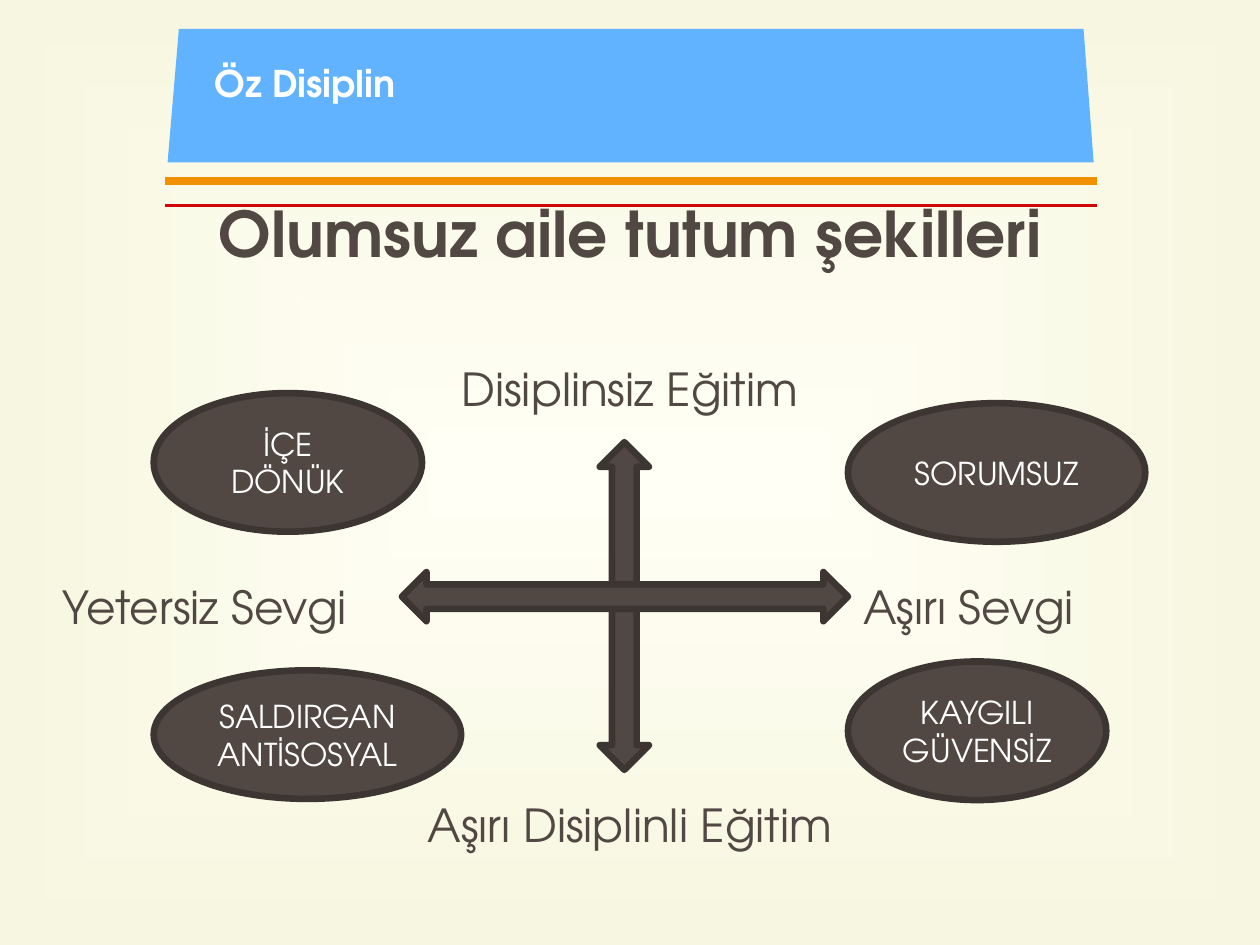
from dataclasses import dataclass

import pptx
import pptx.dml.color
import pptx.enum.shapes
import pptx.enum.text
import pptx.oxml
import pptx.oxml.ns
import pptx.util
from pptx.util import Inches

ALIGN = pptx.enum.text.PP_ALIGN
ANCHOR = pptx.enum.text.MSO_ANCHOR
SHAPE = pptx.enum.shapes.MSO_SHAPE


@dataclass(frozen=True)
class Theme:
    font: str = "TeX Gyre Adventor"
    center: str = "FFFFF5"
    edge: str = "F7F6E0"
    header: str = "61B3FF"
    orange: str = "F29100"
    red: str = "D20509"
    brown: str = "514843"
    outline: str = "3C3532"
    white: str = "FFFFFF"
    title_size: float = 21
    heading_size: float = 36
    label_size: float = 26
    oval_size: float = 18
    outline_width: float = 3.78


THEME = Theme()


@dataclass(frozen=True)
class Label:
    text: str
    left: float
    middle: float
    width: float
    size: float = THEME.label_size
    color: str = THEME.brown
    bold: bool = False
    alignment: ALIGN = ALIGN.CENTER


@dataclass(frozen=True)
class Figure:
    kind: SHAPE
    left: float
    top: float
    width: float
    height: float
    text: str = ""


@dataclass(frozen=True)
class Rule:
    y: float
    color: str
    weight: float


LABEL_HEIGHT = 0.7
RULE_LEFT, RULE_RIGHT = 1.31, 8.71
HEADER_CORNERS = [(1.42, 0.23), (8.6, 0.23), (8.68, 1.29), (1.33, 1.29)]

RULES = [Rule(1.44, THEME.orange, 4.5), Rule(1.63, THEME.red, 1.5)]

LABELS = [
    Label("Öz Disiplin", 1.7, 0.66, 6.6, THEME.title_size, THEME.white, True, ALIGN.LEFT),
    Label("Olumsuz aile tutum şekilleri", 0.5, 1.84, 9, THEME.heading_size, bold=True),
    Label("Disiplinsiz Eğitim", 0.5, 3.08, 9),
    Label("Yetersiz Sevgi", 0.5, 4.81, 2.6, alignment=ALIGN.LEFT),
    Label("Aşırı Sevgi", 6.85, 4.81, 2.6, alignment=ALIGN.LEFT),
    Label("Aşırı Disiplinli Eğitim", 0.5, 6.54, 9),
]

FIGURES = [
    Figure(SHAPE.UP_DOWN_ARROW, 4.76, 3.51, 0.39, 2.6),
    Figure(SHAPE.LEFT_RIGHT_ARROW, 3.19, 4.54, 3.54, 0.39),
    Figure(SHAPE.OVAL, 1.22, 3.12, 2.13, 1.1, "İÇE DÖNÜK"),
    Figure(SHAPE.OVAL, 1.22, 5.32, 2.44, 1.02, "SALDIRGAN ANTİSOSYAL"),
    Figure(SHAPE.OVAL, 6.73, 3.2, 2.36, 1.1, "SORUMSUZ"),
    Figure(SHAPE.OVAL, 6.73, 5.25, 2.05, 1.1, "KAYGILI GÜVENSİZ"),
]


def rgb(value: str) -> pptx.dml.color.RGBColor:
    return pptx.dml.color.RGBColor.from_string(value)


def apply_format(target, values: dict) -> None:
    for name, value in values.items():
        setattr(target, name, value)


def paint_background(slide) -> None:
    """Fill the background with a rectangular gradient around the centre."""
    fill = slide.background.fill
    fill.gradient()
    for stop, color in zip(fill.gradient_stops, (THEME.center, THEME.edge)):
        stop.color.rgb = rgb(color)
    qn = pptx.oxml.ns.qn
    linear = next(slide.background._cSld.iter(qn("a:lin")))
    path = pptx.oxml.parse_xml(
        f'<a:path {pptx.oxml.ns.nsdecls("a")} path="rect">'
        '<a:fillToRect l="50000" t="50000" r="50000" b="50000"/></a:path>'
    )
    linear.getparent().replace(linear, path)


def write_text(shape, text: str, size: float, color: str,
               bold: bool = False, alignment: ALIGN = ALIGN.CENTER) -> None:
    apply_format(shape.text_frame, {"word_wrap": True, "vertical_anchor": ANCHOR.MIDDLE})
    paragraph = shape.text_frame.paragraphs[0]
    apply_format(paragraph, {"text": text, "alignment": alignment})
    font = paragraph.runs[0].font
    apply_format(font, {"name": THEME.font, "size": pptx.util.Pt(size), "bold": bold})
    font.color.rgb = rgb(color)


def draw_header(slide) -> None:
    start, *others = [(Inches(x), Inches(y)) for x, y in HEADER_CORNERS]
    builder = slide.shapes.build_freeform(*start)
    builder.add_line_segments(others, close=True)
    shape = builder.convert_to_shape()
    shape.shadow.inherit = False
    shape.fill.solid()
    shape.fill.fore_color.rgb = rgb(THEME.header)
    shape.line.fill.background()


def draw_rule(slide, rule: Rule) -> None:
    connector = slide.shapes.add_connector(
        pptx.enum.shapes.MSO_CONNECTOR.STRAIGHT,
        Inches(RULE_RIGHT), Inches(rule.y), Inches(RULE_LEFT), Inches(rule.y))
    connector.line.color.rgb = rgb(rule.color)
    connector.line.width = pptx.util.Pt(rule.weight)
    effects = pptx.oxml.parse_xml(f'<a:effectLst {pptx.oxml.ns.nsdecls("a")}/>')
    connector._element.spPr.append(effects)


def draw_label(slide, label: Label) -> None:
    box = slide.shapes.add_textbox(
        Inches(label.left), Inches(label.middle - LABEL_HEIGHT / 2),
        Inches(label.width), Inches(LABEL_HEIGHT))
    apply_format(box.text_frame, {"margin_left": 0, "margin_right": 0})
    write_text(box, label.text, label.size, label.color, label.bold, label.alignment)


def draw_figure(slide, figure: Figure) -> None:
    shape = slide.shapes.add_shape(
        figure.kind, Inches(figure.left), Inches(figure.top),
        Inches(figure.width), Inches(figure.height))
    shape.shadow.inherit = False
    shape.fill.solid()
    shape.fill.fore_color.rgb = rgb(THEME.brown)
    shape.line.color.rgb = rgb(THEME.outline)
    shape.line.width = pptx.util.Pt(THEME.outline_width)
    if figure.text:
        write_text(shape, figure.text, THEME.oval_size, THEME.white)


def main() -> None:
    presentation = pptx.Presentation()
    apply_format(presentation, {"slide_width": Inches(10), "slide_height": Inches(7.5)})
    slide = presentation.slides.add_slide(presentation.slide_layouts[6])
    paint_background(slide)
    for rule in RULES:
        draw_rule(slide, rule)
    draw_header(slide)
    for label in LABELS:
        draw_label(slide, label)
    for figure in FIGURES:
        draw_figure(slide, figure)
    presentation.save("out.pptx")


if __name__ == "__main__":
    main()
